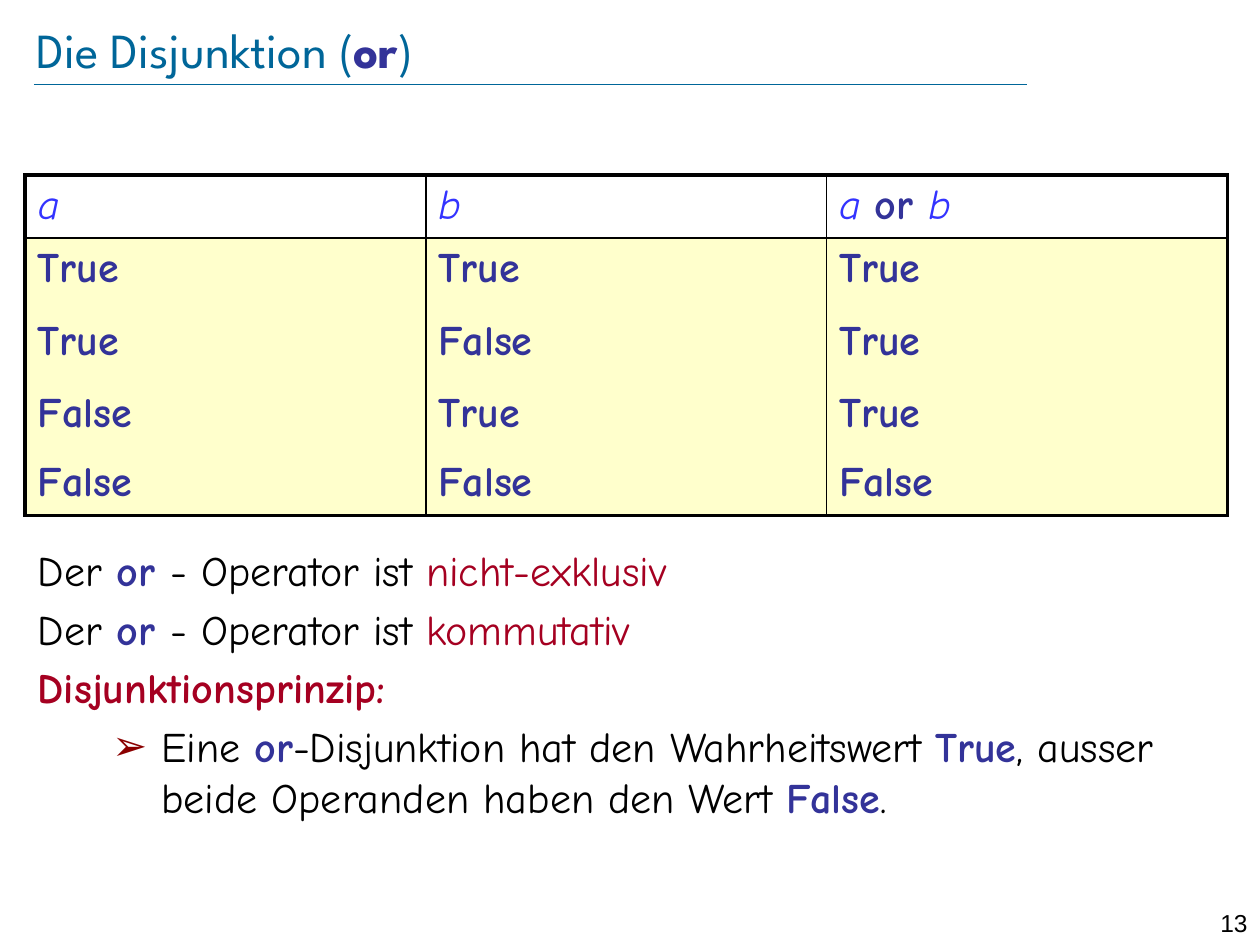
from lxml import etree
from pptx import Presentation
from pptx.dml.color import RGBColor
from pptx.enum.text import MSO_ANCHOR, MSO_AUTO_SIZE, PP_ALIGN
from pptx.oxml.ns import qn
from pptx.util import Inches, Pt

BLACK = RGBColor(0x00, 0x00, 0x00)
TEAL = RGBColor(0x00, 0x66, 0x99)
NAVY = RGBColor(0x33, 0x33, 0x99)
BLUE = RGBColor(0x33, 0x33, 0xFF)
RED = RGBColor(0xA5, 0x00, 0x21)
DARK_RED = RGBColor(0x8B, 0x00, 0x00)
CREAM = RGBColor(0xFF, 0xFF, 0xCC)

TITLE_FONT = "League Spartan"
TEXT_FONT = "Comic Neue"
NUMBER_FONT = "Arial"

KEYWORD = {"color": NAVY, "bold": True}
VARIABLE = {"color": BLUE, "italic": True}
TERM = {"color": RED}

HEADER = [
    [("a", VARIABLE)],
    [("b", VARIABLE)],
    [("a ", VARIABLE), ("or ", KEYWORD), ("b", VARIABLE)],
]
TRUTH_VALUES = [(True, True), (True, False), (False, True), (False, False)]
ROW_HEIGHTS = [0.47, 0.58, 0.57, 0.55, 0.48]
COLUMN_WIDTH = 3.18
OUTER, INNER = 2.25, 1


def write(paragraph, runs, font=TEXT_FONT, size=24, color=BLACK,
          align=PP_ALIGN.LEFT, space_before=0):
    """Fill a paragraph with (text, style) runs; a style overrides the defaults."""
    paragraph.alignment = align
    paragraph.space_before = Pt(space_before)
    for text, style in runs:
        run = paragraph.add_run()
        run.text = text
        run.font.name = font
        run.font.size = Pt(size)
        run.font.bold = style.get("bold", False)
        run.font.italic = style.get("italic", False)
        run.font.color.rgb = style.get("color", color)


def place(shape, left, top, width, height):
    shape.left, shape.top = Inches(left), Inches(top)
    shape.width, shape.height = Inches(width), Inches(height)


def set_bullet(paragraph, margin=0, indent=0, char=None):
    properties = paragraph._p.get_or_add_pPr()
    properties.set("marL", str(Inches(margin)))
    properties.set("indent", str(Inches(indent)))
    if char is None:
        etree.SubElement(properties, qn("a:buNone"))
        return
    bullet_color = etree.SubElement(properties, qn("a:buClr"))
    etree.SubElement(bullet_color, qn("a:srgbClr"), val=str(DARK_RED))
    etree.SubElement(properties, qn("a:buChar"), char=char)


def set_borders(cell, **widths):
    """Draw the borders L, R, T, B in points; a width of 0 means no line."""
    properties = cell._tc.get_or_add_tcPr()
    for side in "LRTB":
        width = widths[side]
        line = etree.SubElement(properties, qn(f"a:ln{side}"), w=str(Pt(width)))
        if width:
            fill = etree.SubElement(line, qn("a:solidFill"))
            etree.SubElement(fill, qn("a:srgbClr"), val=str(BLACK))
        else:
            etree.SubElement(line, qn("a:noFill"))


def add_title(slide):
    title = slide.shapes.title
    place(title, 0.29, 0.13, 8.96, 0.51)
    frame = title.text_frame
    frame.auto_size = MSO_AUTO_SIZE.NONE
    frame.vertical_anchor = MSO_ANCHOR.MIDDLE
    frame.margin_left = frame.margin_right = 0
    frame.margin_top = frame.margin_bottom = 0
    write(frame.paragraphs[0],
          [("Die Disjunktion (", {}), ("or", KEYWORD), (")", {})],
          font=TITLE_FONT, size=28, color=TEAL)


def add_title_rule(slide):
    rule = slide.shapes.add_connector(
        1, Inches(0.27), Inches(0.67), Inches(8.15), Inches(0.67))
    rule.line.color.rgb = TEAL
    rule.line.width = Pt(0.25)
    etree.SubElement(rule._element.spPr, qn("a:effectLst"))


def add_truth_table(slide):
    rows = HEADER, *(
        [[(str(value), KEYWORD)] for value in (a, b, a or b)]
        for a, b in TRUTH_VALUES)
    last_row, last_column = len(rows) - 1, len(HEADER) - 1
    table = slide.shapes.add_table(
        len(rows), len(HEADER), Inches(0.2), Inches(1.39),
        Inches(COLUMN_WIDTH * len(HEADER)), Inches(sum(ROW_HEIGHTS))).table
    table.first_row = table.horz_banding = False
    for column in table.columns:
        column.width = Inches(COLUMN_WIDTH)
    for r, row in enumerate(rows):
        table.rows[r].height = Inches(ROW_HEIGHTS[r])
        for c, runs in enumerate(row):
            cell = table.cell(r, c)
            set_borders(
                cell,
                L=OUTER if c == 0 else INNER,
                R=OUTER if c == last_column else INNER,
                T={0: OUTER, 1: INNER}.get(r, 0),
                B={0: INNER, last_row: OUTER}.get(r, 0))
            if r == 0:
                cell.fill.background()
            else:
                cell.fill.solid()
                cell.fill.fore_color.rgb = CREAM
            write(cell.text_frame.paragraphs[0], runs)


def add_explanation(slide):
    body = slide.placeholders[1]
    place(body, 0.2, 4.27, 9.53, 2.71)
    frame = body.text_frame
    frame.auto_size = MSO_AUTO_SIZE.NONE
    statements = [
        [("Der", {}), (" or ", KEYWORD), ("- Operator ist ", {}), (term, TERM)]
        for term in ("nicht-exklusiv", "kommutativ")]
    statements.append([("Disjunktionsprinzip:", {"color": RED, "bold": True})])
    for i, runs in enumerate(statements):
        paragraph = frame.add_paragraph() if i else frame.paragraphs[0]
        set_bullet(paragraph)
        write(paragraph, runs, space_before=4.8 if i else 0)

    principle = frame.add_paragraph()
    principle.level = 1
    set_bullet(principle, margin=0.98, indent=-0.39, char="➢")
    write(principle, [
        ("Eine ", {}), ("or", KEYWORD),
        ("-Disjunktion hat den Wahrheitswert ", {}), ("True", KEYWORD),
        (", ausser beide Operanden haben den Wert ", {}), ("False", KEYWORD),
        (".", {})], space_before=4.8)


def add_page_number(slide):
    number = slide.shapes.add_textbox(
        Inches(9.45), Inches(7.16), Inches(0.55), Inches(0.24))
    number.text_frame.word_wrap = True
    write(number.text_frame.paragraphs[0], [("13", {})],
          font=NUMBER_FONT, size=14, align=PP_ALIGN.RIGHT)


def main():
    presentation = Presentation()
    presentation.slide_width = Inches(10)
    presentation.slide_height = Inches(7.5)
    slide = presentation.slides.add_slide(presentation.slide_layouts[1])
    add_title_rule(slide)
    add_page_number(slide)
    add_title(slide)
    add_explanation(slide)
    add_truth_table(slide)
    presentation.save("out.pptx")


if __name__ == "__main__":
    main()
